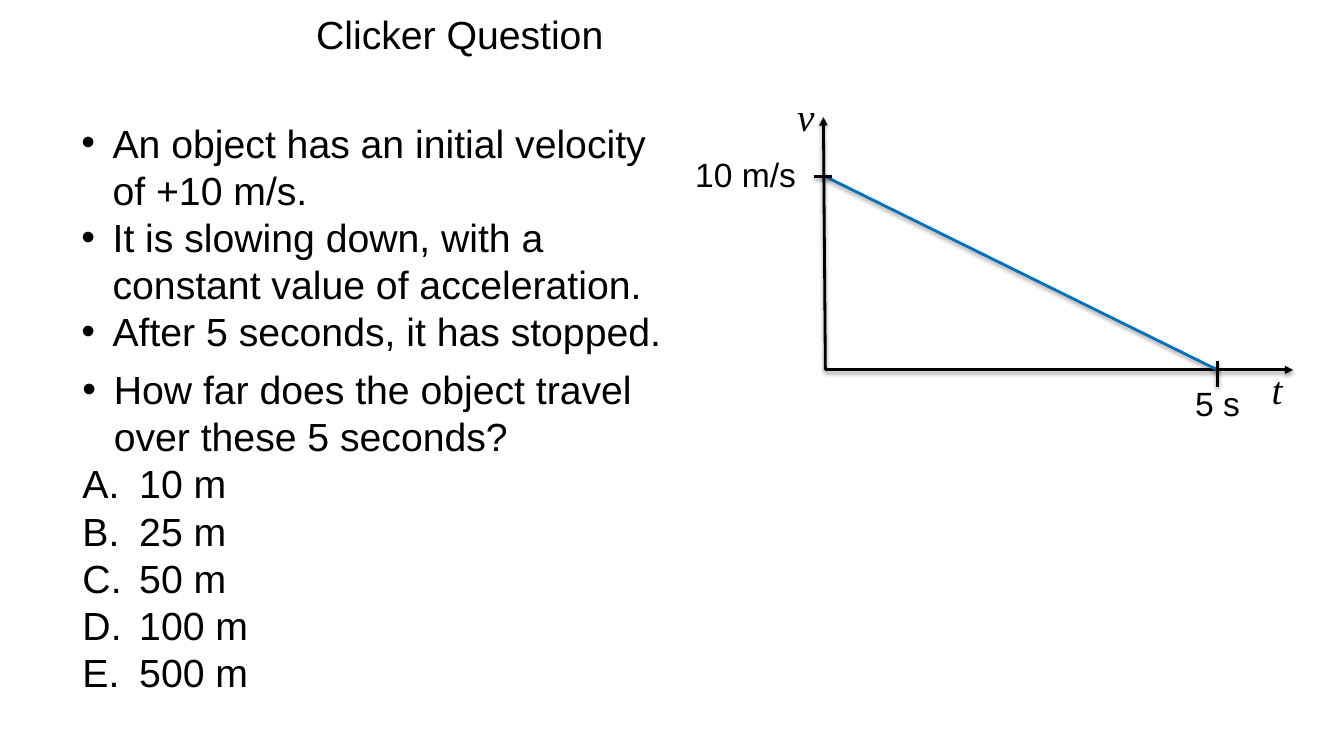
from dataclasses import dataclass

from lxml.etree import SubElement
from pptx import Presentation
from pptx.dml.color import RGBColor
from pptx.enum.shapes import MSO_CONNECTOR as Connector
from pptx.enum.text import MSO_ANCHOR as Anchor, PP_ALIGN as Align
from pptx.oxml.ns import qn
from pptx.slide import Slide
from pptx.util import Cm, Pt

BLACK, BLUE = "000000", "0070C0"
ORIGIN_X, ORIGIN_Y = 20.8, 9.32
START_Y, STOP_X = 4.45, 30.68


@dataclass
class Item:
    text: str
    marker: str = ""
    indent: float = 0


@dataclass
class Label:
    items: list[Item]
    left: float
    top: float
    width: float
    height: float
    size: int = 28
    font: str = "Arial"
    italic: bool = False
    wrap: bool = False
    align: Align = Align.LEFT
    anchor: Anchor = Anchor.TOP


@dataclass
class Stroke:
    start: tuple[float, float]
    end: tuple[float, float]
    color: str = BLACK
    arrow: bool = False


def bullet(text: str) -> Item:
    return Item(text, "•", 0.79)


def answer(text: str) -> Item:
    return Item(text, "alphaUcPeriod", 1.43)


STROKES = [
    Stroke((ORIGIN_X, ORIGIN_Y), (20.75, 2.95), arrow=True),
    Stroke((ORIGIN_X, ORIGIN_Y), (32.59, ORIGIN_Y), arrow=True),
    Stroke((ORIGIN_X, START_Y), (STOP_X, ORIGIN_Y), BLUE),
    Stroke((20.52, START_Y), (20.96, START_Y)),
    Stroke((STOP_X, 9.09), (STOP_X, 9.75)),
]

LABELS = [
    Label([Item("v")], 19.84, 2.21, 0.97, 1.45, font="Times New Roman", italic=True),
    Label([Item("t")], 31.8, 9.09, 0.79, 1.45, font="Times New Roman", italic=True),
    Label([Item("10 m/s")], 17.27, 3.76, 3.07, 1.27, size=24),
    Label([Item("5 s")], 29.87, 9.53, 1.65, 1.27, size=24),
    Label([bullet("An object has an initial velocity of +10 m/s."),
           bullet("It is slowing down, with a constant value of acceleration."),
           bullet("After 5 seconds, it has stopped.")],
          1.8, 2.87, 15.62, 6.25, wrap=True),
    Label([Item("Clicker Question")], 4.6, 0.13, 13.97, 1.47,
          wrap=True, align=Align.CENTER, anchor=Anchor.MIDDLE),
    Label([bullet("How far does the object travel over these 5 seconds?"),
           *(answer(f"{metres} m") for metres in (10, 25, 50, 100, 500))],
          1.83, 9.09, 15.62, 8.64, wrap=True),
]


def rgb(color: str) -> RGBColor:
    return RGBColor.from_string(color)


def add_stroke(page: Slide, stroke: Stroke) -> None:
    ends = [Cm(value) for value in (*stroke.start, *stroke.end)]
    line = page.shapes.add_connector(Connector.STRAIGHT, *ends)
    line.line.width = Pt(2)
    line.line.color.rgb = rgb(stroke.color)
    if stroke.arrow:
        SubElement(line.line._get_or_add_ln(), qn("a:tailEnd"), type="triangle")
    effects = SubElement(line._element.spPr, qn("a:effectLst"))
    shadow = SubElement(effects, qn("a:outerShdw"), blurRad=str(Pt(3.1)),
                        dist=str(Pt(1.6)), dir="5400000", rotWithShape="0")
    shade = SubElement(shadow, qn("a:srgbClr"), val=BLACK)
    SubElement(shade, qn("a:alpha"), val="38000")


def add_marker(para, item: Item) -> None:
    """Hang a bullet or an automatic letter in front of the paragraph."""
    properties = para._p.get_or_add_pPr()
    indent = Cm(item.indent)
    properties.set("marL", str(indent))
    properties.set("indent", str(-indent))
    if item.marker == "•":
        SubElement(properties, qn("a:buFont"), typeface="Arial")
        SubElement(properties, qn("a:buChar"), char=item.marker)
    else:
        SubElement(properties, qn("a:buAutoNum"), type=item.marker)


def add_label(page: Slide, label: Label) -> None:
    place = (label.left, label.top, label.width, label.height)
    box = page.shapes.add_textbox(*(Cm(value) for value in place))
    frame = box.text_frame
    frame.word_wrap = label.wrap
    frame.vertical_anchor = label.anchor
    font_format = {"name": label.font, "size": Pt(label.size), "italic": label.italic}
    for index, item in enumerate(label.items):
        para = frame.add_paragraph() if index else frame.paragraphs[0]
        para.alignment = label.align
        if item.marker:
            add_marker(para, item)
        span = para.add_run()
        span.text = item.text
        for name, value in font_format.items():
            setattr(span.font, name, value)
        span.font.color.rgb = rgb(BLACK)


def main() -> None:
    deck = Presentation()
    deck.slide_width, deck.slide_height = Cm(33.87), Cm(19.05)
    page = deck.slides.add_slide(deck.slide_layouts[6])
    for stroke in STROKES:
        add_stroke(page, stroke)
    for label in LABELS:
        add_label(page, label)
    deck.save("out.pptx")


if __name__ == "__main__":
    main()
